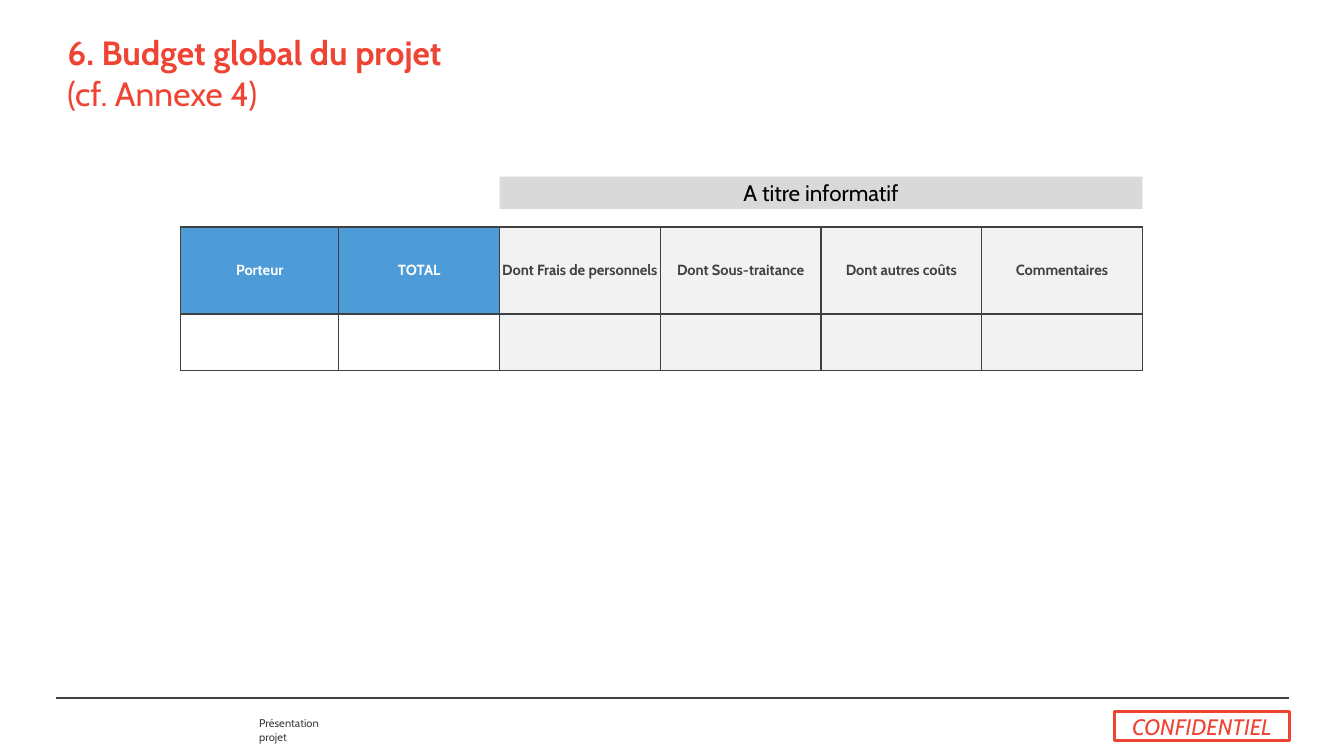
from dataclasses import dataclass
from pptx import Presentation
from pptx import util as u
from pptx.dml import color
from pptx.enum import shapes, text
from pptx.oxml import ns
from lxml import etree

FONT = "Cabin"
RED, DARK, BLUE, PALE = "EF4333", "404040", "4D9CD8", "F2F2F2"
LEFT, TOP, FIRST, WIDE = 4.55, 5.72, 3.99, 4.05


@dataclass
class Column:
    label: str
    wide: float = WIDE
    head: str = PALE
    ink: str = DARK
    body: str = PALE


@dataclass
class Box:
    label: str
    left: float
    top: float
    width: float
    height: float
    ink: str
    fill: str = ""
    edge: str = ""
    slant: bool = False


COLS = [
    Column("Porteur", FIRST, BLUE, "FFFFFF", ""),
    Column("TOTAL", WIDE, BLUE, "FFFFFF", ""),
    Column("Dont Frais de personnels"),
    Column("Dont Sous-traitance"),
    Column("Dont autres coûts"),
    Column("Commentaires"),
]
BOXES = [
    Box("A titre informatif", LEFT + FIRST + WIDE, 4.45, 4 * WIDE, 0.82,
        "000000", fill="D9D9D9"),
    Box("CONFIDENTIEL", 28.09, 17.93, 4.4, 0.74, RED, edge=RED, slant=True),
]


def rgb(code: str) -> color.RGBColor:
    return color.RGBColor.from_string(code)


def style(run, size: float, ink: str, bold=False, slant=False) -> None:
    run.font.name = FONT
    run.font.size = u.Pt(size)
    run.font.color.rgb = rgb(ink)
    run.font.bold = bold
    run.font.italic = slant


def paint(fill, code: str) -> None:
    if code:
        fill.solid()
        fill.fore_color.rgb = rgb(code)
    else:
        fill.background()


def inset(frame, side: float, end: float) -> None:
    frame.margin_left = frame.margin_right = u.Cm(side)
    frame.margin_top = frame.margin_bottom = u.Cm(end)


def border(cell) -> None:
    props = cell._tc.get_or_add_tcPr()
    for side in ("lnL", "lnR", "lnT", "lnB"):
        line = etree.SubElement(props, ns.qn(f"a:{side}"), w=str(u.Pt(1)))
        solid = etree.SubElement(line, ns.qn("a:solidFill"))
        etree.SubElement(solid, ns.qn("a:srgbClr"), val=DARK)


def add_title(slide) -> None:
    title = slide.shapes.title
    title.left, title.top = u.Cm(1.7), u.Cm(0.76)
    title.width, title.height = u.Cm(30.48), u.Cm(2.13)
    frame = title.text_frame
    frame.text = "6. Budget global du projet\v(cf. Annexe 4)"
    frame.auto_size = text.MSO_AUTO_SIZE.NONE
    frame.vertical_anchor = text.MSO_ANCHOR.MIDDLE
    inset(frame, 0, 0.13)
    para = frame.paragraphs[0]
    para.alignment = text.PP_ALIGN.LEFT
    for run, bold in zip(para.runs, (True, False)):
        style(run, 24, RED, bold)


def add_footer(slide) -> None:
    rule = slide.shapes.add_connector(
        shapes.MSO_CONNECTOR.STRAIGHT,
        u.Cm(1.4), u.Cm(17.58), u.Cm(32.49), u.Cm(17.58))
    rule.line.color.rgb = rgb(DARK)
    rule.line.width = u.Pt(1.5)
    etree.SubElement(rule._element.spPr, ns.qn("a:effectLst"))
    note = slide.shapes.add_textbox(
        u.Cm(6.53), u.Cm(18.06), u.Cm(2.24), u.Cm(0.33))
    frame = note.text_frame
    frame.text = "Présentation projet"
    frame.word_wrap = True
    inset(frame, 0, 0)
    style(frame.paragraphs[0].runs[0], 8, DARK)


def add_budget(slide) -> None:
    highs = (2.19, 1.43)
    table = slide.shapes.add_table(
        len(highs), len(COLS), u.Cm(LEFT), u.Cm(TOP),
        u.Cm(sum(col.wide for col in COLS)), u.Cm(sum(highs))).table
    for row, high in zip(table.rows, highs):
        row.height = u.Cm(high)
    for i, col in enumerate(COLS):
        table.columns[i].width = u.Cm(col.wide)
        for j, fill in enumerate((col.head, col.body)):
            cell = table.cell(j, i)
            border(cell)
            paint(cell.fill, fill)
        head = table.cell(0, i)
        inset(head, 0, 0)
        head.vertical_anchor = text.MSO_ANCHOR.MIDDLE
        head.text_frame.text = col.label
        para = head.text_frame.paragraphs[0]
        para.alignment = text.PP_ALIGN.CENTER
        style(para.runs[0], 10.5, col.ink, True)


def add_box(slide, box: Box) -> None:
    shape = slide.shapes.add_shape(
        shapes.MSO_SHAPE.RECTANGLE, u.Cm(box.left), u.Cm(box.top),
        u.Cm(box.width), u.Cm(box.height))
    shape.shadow.inherit = False
    paint(shape.fill, box.fill)
    paint(shape.line.fill, box.edge)
    if box.edge:
        shape.line.width = u.Pt(2)
    frame = shape.text_frame
    frame.text = box.label
    frame.vertical_anchor = text.MSO_ANCHOR.MIDDLE
    para = frame.paragraphs[0]
    para.alignment = text.PP_ALIGN.CENTER
    style(para.runs[0], 16, box.ink, slant=box.slant)


def main() -> None:
    deck = Presentation()
    deck.slide_width, deck.slide_height = u.Cm(33.87), u.Cm(19.05)
    slide = deck.slides.add_slide(deck.slide_layouts[5])
    add_footer(slide)
    add_title(slide)
    add_budget(slide)
    for box in BOXES:
        add_box(slide, box)
    deck.save("out.pptx")


if __name__ == "__main__":
    main()
